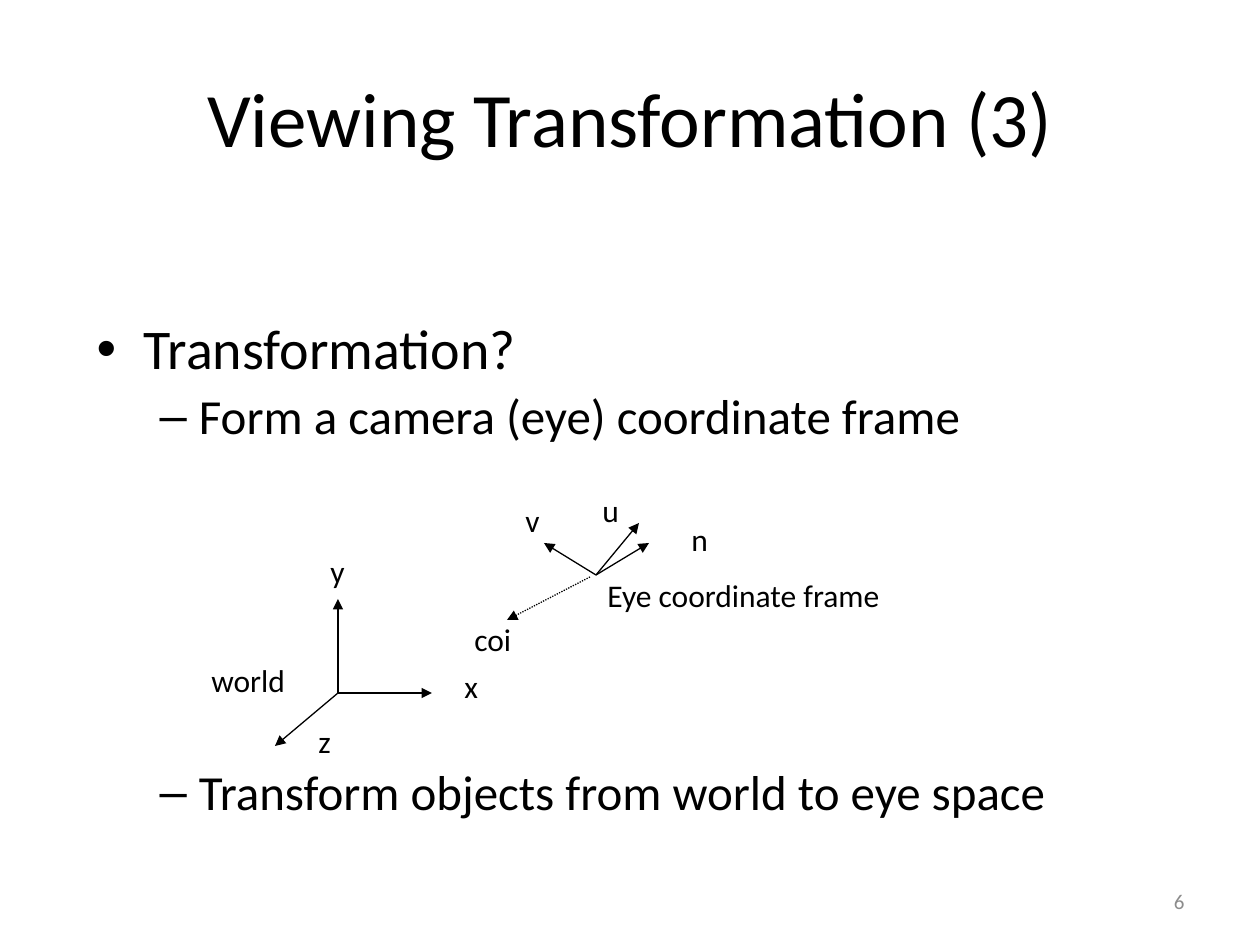
"""Build the slide on the viewing transformation and its coordinate frames."""
from dataclasses import dataclass
from typing import Any, NamedTuple, Optional

from lxml import etree
from pptx import Presentation
from pptx.dml.color import RGBColor
from pptx.enum.dml import MSO_LINE
from pptx.enum.shapes import MSO_CONNECTOR
from pptx.enum.text import MSO_ANCHOR, MSO_AUTO_SIZE, PP_ALIGN
from pptx.oxml.ns import qn
from pptx.util import Emu, Pt

STRAIGHT = MSO_CONNECTOR.STRAIGHT
DOTTED = MSO_LINE.ROUND_DOT
MIDDLE, TOP = MSO_ANCHOR.MIDDLE, MSO_ANCHOR.TOP
LEFT, CENTER, RIGHT = PP_ALIGN.LEFT, PP_ALIGN.CENTER, PP_ALIGN.RIGHT
NO_AUTOFIT = MSO_AUTO_SIZE.NONE
EMU_PER_PX = 914400 / 126
TITLE_AND_CONTENT = 1


@dataclass(frozen=True)
class Theme:
    font: str = "Calibri"
    ink: RGBColor = RGBColor(0x00, 0x00, 0x00)
    muted: RGBColor = RGBColor(0x8C, 0x8C, 0x8C)
    title_size: int = 44
    bullet_sizes: tuple[int, int] = (32, 28)
    label_size: int = 18
    number_size: int = 12
    line_width: float = 0.75


class Box(NamedTuple):
    left: int
    top: int
    width: int
    height: int = 50


class Point(NamedTuple):
    x: int
    y: int


class Bullet(NamedTuple):
    text: str
    level: int
    space_before: float


class Label(NamedTuple):
    text: str
    box: Box


class Arrow(NamedTuple):
    start: Point
    end: Point
    dash: Optional[MSO_LINE] = None


THEME = Theme()
WORLD_ORIGIN = Point(338, 693)
EYE_ORIGIN = Point(596, 575)

BULLETS = (
    Bullet("Transformation?", 0, 6.4),
    Bullet("Form a camera (eye) coordinate frame", 1, 5.6),
    Bullet("Transform objects from world to eye space", 1, 185),
)
ARROWS = (
    Arrow(WORLD_ORIGIN, Point(338, 599)),
    Arrow(WORLD_ORIGIN, Point(432, 693)),
    Arrow(WORLD_ORIGIN, Point(275, 746)),
    Arrow(EYE_ORIGIN, Point(544, 543)),
    Arrow(EYE_ORIGIN, Point(639, 523)),
    Arrow(EYE_ORIGIN, Point(649, 543)),
    Arrow(Point(590, 577), Point(507, 620), DOTTED),
)
LABELS = (
    Label("world", Box(199, 655, 102)),
    Label("x", Box(452, 661, 40)),
    Label("y", Box(318, 546, 42)),
    Label("z", Box(306, 716, 39)),
    Label("u", Box(590, 485, 43)),
    Label("v", Box(513, 495, 42)),
    Label("n", Box(679, 514, 43)),
    Label("Eye coordinate frame", Box(595, 570, 333)),
    Label("coi", Box(462, 614, 64)),
)


def px(length: int) -> Emu:
    """Turn a length in px into EMU."""
    return Emu(round(length * EMU_PER_PX))


def apply(target: Any, values: dict[str, Any]) -> None:
    """Set each attribute of the target from the format values."""
    for name, value in values.items():
        setattr(target, name, value)


def place(shape: Any, box: Box) -> None:
    """Move and size a shape."""
    apply(shape, {name: px(value) for name, value in box._asdict().items()})


def write(paragraph: Any, text: str, size: int, color: RGBColor, **layout: Any) -> None:
    """Write one formatted run in a paragraph."""
    apply(paragraph, layout)
    run = paragraph.add_run()
    run.text = text
    apply(run.font, {"name": THEME.font, "size": Pt(size)})
    run.font.color.rgb = color


def fill_title(title: Any, text: str) -> None:
    """Place and fill the title placeholder."""
    place(title, Box(63, 38, 1134, 158))
    apply(title.text_frame, {"auto_size": NO_AUTOFIT, "vertical_anchor": MIDDLE})
    write(title.text_frame.paragraphs[0], text, THEME.title_size, THEME.ink, alignment=CENTER)


def fill_body(body: Any, bullets: tuple[Bullet, ...]) -> None:
    """Place the body placeholder and write its list."""
    place(body, Box(84, 315, 1071, 567))
    frame = body.text_frame
    apply(frame, {"auto_size": NO_AUTOFIT, "vertical_anchor": TOP})
    for index, bullet in enumerate(bullets):
        paragraph = frame.add_paragraph() if index else frame.paragraphs[0]
        write(paragraph, bullet.text, THEME.bullet_sizes[bullet.level], THEME.ink,
              level=bullet.level, line_spacing=0.9, space_before=Pt(bullet.space_before))


def add_text(slide: Any, label: Label, size: int, color: RGBColor,
             alignment: PP_ALIGN = LEFT, anchor: MSO_ANCHOR = TOP) -> None:
    """Add a one-line text box."""
    shape = slide.shapes.add_textbox(*map(px, label.box))
    frame = shape.text_frame
    apply(frame, {"word_wrap": True, "auto_size": NO_AUTOFIT, "vertical_anchor": anchor})
    write(frame.paragraphs[0], label.text, size, color, alignment=alignment)


def add_arrow(slide: Any, arrow: Arrow) -> None:
    """Add a line with a triangular head at its end."""
    connector = slide.shapes.add_connector(STRAIGHT, *map(px, arrow.start + arrow.end))
    line = connector.line
    line.color.rgb = THEME.ink
    apply(line, {"width": Pt(THEME.line_width), "dash_style": arrow.dash})
    etree.SubElement(line._get_or_add_ln(), qn("a:tailEnd"), type="triangle")
    etree.SubElement(connector._element.spPr, qn("a:effectLst"))


def main() -> None:
    """Build and save the presentation."""
    presentation = Presentation()
    apply(presentation, {"slide_width": px(1260), "slide_height": px(945)})
    slide = presentation.slides.add_slide(presentation.slide_layouts[TITLE_AND_CONTENT])
    fill_title(slide.shapes.title, "Viewing Transformation (3)")
    fill_body(slide.placeholders[1], BULLETS)
    for arrow in ARROWS:
        add_arrow(slide, arrow)
    for label in LABELS:
        add_text(slide, label, THEME.label_size, THEME.ink)
    add_text(slide, Label("6", Box(903, 876, 294)), THEME.number_size, THEME.muted, RIGHT, MIDDLE)
    presentation.save("out.pptx")


if __name__ == "__main__":
    main()
